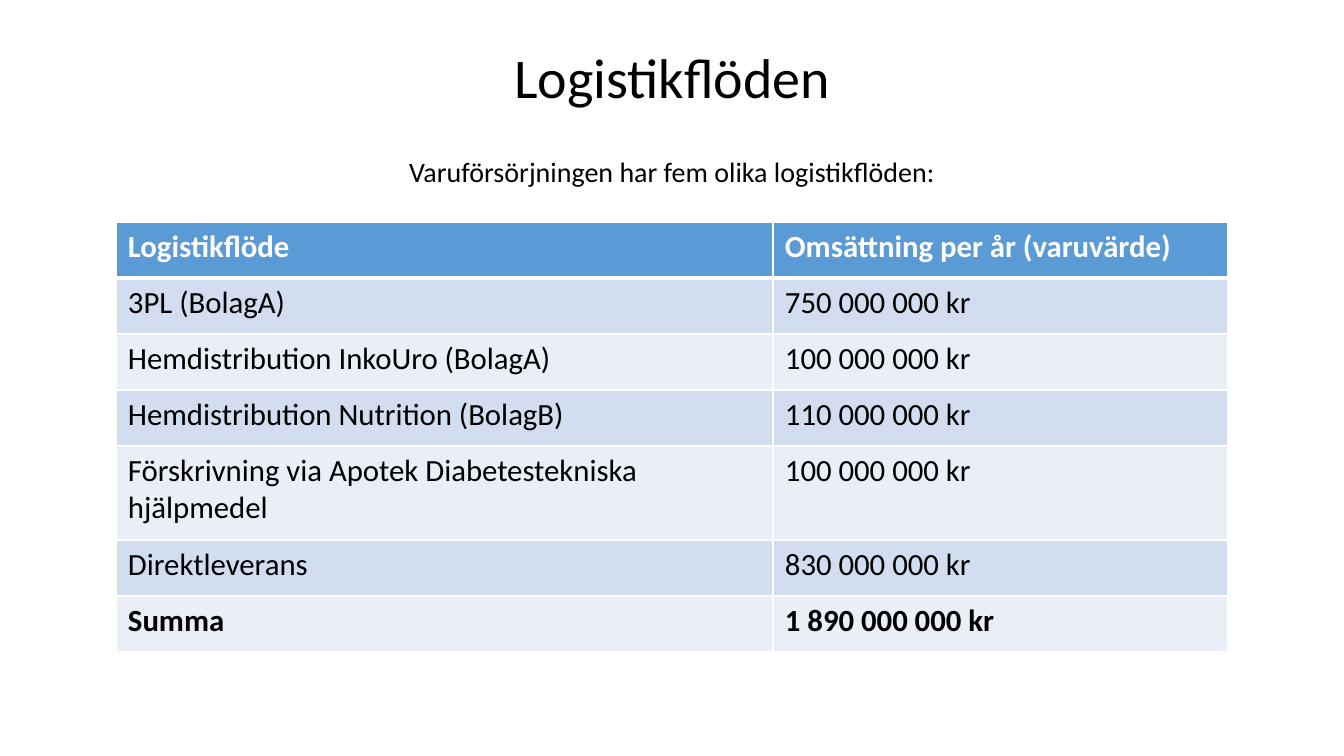
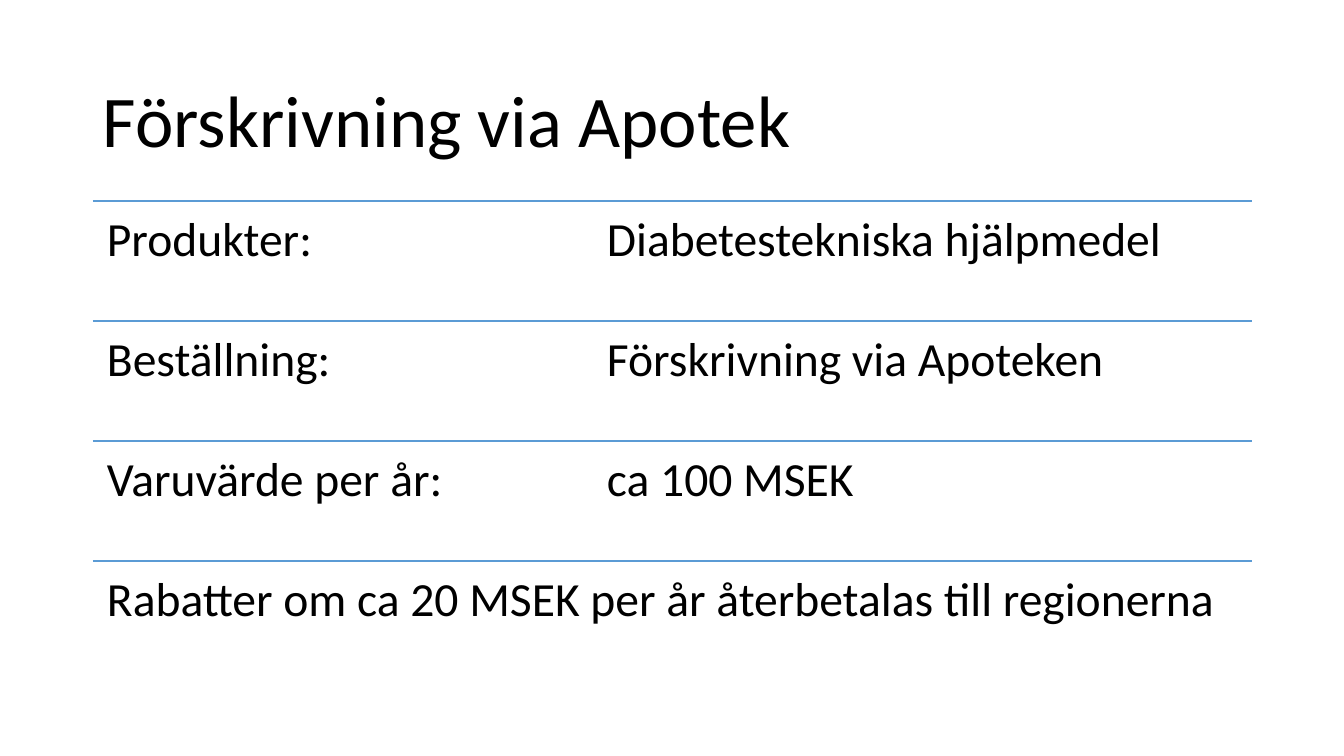
from lxml.etree import SubElement
from pptx import Presentation
from pptx.dml.color import RGBColor
from pptx.enum.shapes import MSO_CONNECTOR
from pptx.enum.text import MSO_ANCHOR, PP_ALIGN
from pptx.oxml.ns import qn
from pptx.util import Emu, Pt

FONT = "Calibri"
COLORS = {
    "text": "000000",
    "white": "FFFFFF",
    "accent": "5B9BD5",
    "band_dark": "D2DEEF",
    "band_light": "EAEFF7",
}


def px(n):
    """Turn slide pixels into EMU, 1344 pixels to the slide width."""
    return Emu(round(n * 12192000 / 1344))


def rgb(name):
    """Look up a named colour."""
    return RGBColor.from_string(COLORS[name])


def write(tf, text, size=20, color="text", bold=False, align=PP_ALIGN.LEFT,
          spacing=None, tab=None):
    """Write one formatted paragraph into a text frame."""
    p = tf.paragraphs[0]
    p.alignment = align
    p.line_spacing = spacing
    if tab:
        tabs = SubElement(p._p.get_or_add_pPr(), qn("a:tabLst"))
        SubElement(tabs, qn("a:tab"), pos=str(px(tab)), algn="l")
    r = p.add_run()
    r.text = text
    r.font.name = FONT
    r.font.size = Pt(size)
    r.font.bold = bold
    r.font.color.rgb = rgb(color)


def set_margins(target, x, y):
    """Set the side and the top and bottom margins of a frame or cell."""
    target.margin_left = target.margin_right = px(x)
    target.margin_top = target.margin_bottom = px(y)


def set_borders(cell, color, bottom=1):
    """Draw all four borders of a table cell."""
    tcPr = cell._tc.get_or_add_tcPr()
    for side, width in (("L", 1), ("R", 1), ("T", 1), ("B", bottom)):
        ln = SubElement(tcPr, qn(f"a:ln{side}"), w=str(Pt(width)))
        fill = SubElement(ln, qn("a:solidFill"))
        SubElement(fill, qn("a:srgbClr"), val=COLORS[color])


class Deck:
    """Hold the presentation style and the current slide."""

    def __init__(self):
        """Start a wide presentation."""
        self.prs = Presentation()
        self.prs.slide_width, self.prs.slide_height = px(1344), px(756)
        self.s = None

    def slide(self):
        """Add a blank slide."""
        self.s = self.prs.slides.add_slide(self.prs.slide_layouts[6])

    def text(self, text, x, y, w, h, margin=(10, 5),
             anchor=MSO_ANCHOR.MIDDLE, **fmt):
        """Add a wrapped text box."""
        tf = self.s.shapes.add_textbox(px(x), px(y), px(w), px(h)).text_frame
        tf.word_wrap = True
        tf.vertical_anchor = anchor
        set_margins(tf, *margin)
        write(tf, text, spacing=0.9, **fmt)

    def rule(self, x, y, w):
        """Add a horizontal accent line."""
        sp = self.s.shapes.add_connector(
            MSO_CONNECTOR.STRAIGHT, px(x), px(y), px(x + w), px(y))
        sp.line.color.rgb = rgb("accent")
        sp.line.width = Pt(1)
        SubElement(sp._element.spPr, qn("a:effectLst"))

    def table(self, rows, x, y, widths, heights):
        """Add a banded table with a header row and a bold total row."""
        table = self.s.shapes.add_table(
            len(rows), len(widths), px(x), px(y),
            px(sum(widths)), px(sum(heights))).table
        for column, width in zip(table.columns, widths):
            column.width = px(width)
        last = len(rows) - 1
        for i, (values, height) in enumerate(zip(rows, heights)):
            table.rows[i].height = px(height)
            header = i == 0
            band = "band_dark" if i % 2 else "band_light"
            for j, value in enumerate(values):
                cell = table.cell(i, j)
                set_margins(cell, 12, 6)
                set_borders(cell, "white", bottom=3 if header else 1)
                cell.fill.solid()
                cell.fill.fore_color.rgb = rgb("accent" if header else band)
                write(cell.text_frame, value, size=22, bold=i in (0, last),
                      color="white" if header else "text")

    def fact_list(self, facts, x, y, w, pitch):
        """Add ruled rows of labels and values aligned at a tab stop."""
        for i, fact in enumerate(facts):
            top = y + i * pitch
            self.rule(x, top, w)
            self.text("\t".join(fact), x, top, w, pitch, margin=(14, 14),
                      anchor=MSO_ANCHOR.TOP, size=34, tab=500)


def main():
    """Build both slides and save them."""
    deck = Deck()

    deck.slide()
    deck.text("Logistikflöden", 111, 19, 1122, 123,
              size=40, align=PP_ALIGN.CENTER)
    deck.text("Varuförsörjningen har fem olika logistikflöden:",
              111, 153, 1122, 40, size=20, align=PP_ALIGN.CENTER)
    flows = [
        ("Logistikflöde", "Omsättning per år (varuvärde)"),
        ("3PL (BolagA)", "750 000 000 kr"),
        ("Hemdistribution InkoUro (BolagA)", "100 000 000 kr"),
        ("Hemdistribution Nutrition (BolagB)", "110 000 000 kr"),
        ("Förskrivning via Apotek Diabetestekniska hjälpmedel",
         "100 000 000 kr"),
        ("Direktleverans", "830 000 000 kr"),
        ("Summa", "1 890 000 000 kr"),
    ]
    deck.table(flows, 116, 222, (657, 455), (56, 56, 56, 56, 94, 56, 56))

    deck.slide()
    deck.text("Förskrivning via Apotek", 93, 61, 1159, 125, size=52)
    facts = [
        ("Produkter:", "Diabetestekniska hjälpmedel"),
        ("Beställning:", "Förskrivning via Apoteken"),
        ("Varuvärde per år:", "ca 100 MSEK"),
        ("Rabatter om ca 20 MSEK per år återbetalas till regionerna",),
    ]
    deck.fact_list(facts, 93, 201, 1159, 120)

    deck.prs.save("out.pptx")


if __name__ == "__main__":
    main()
